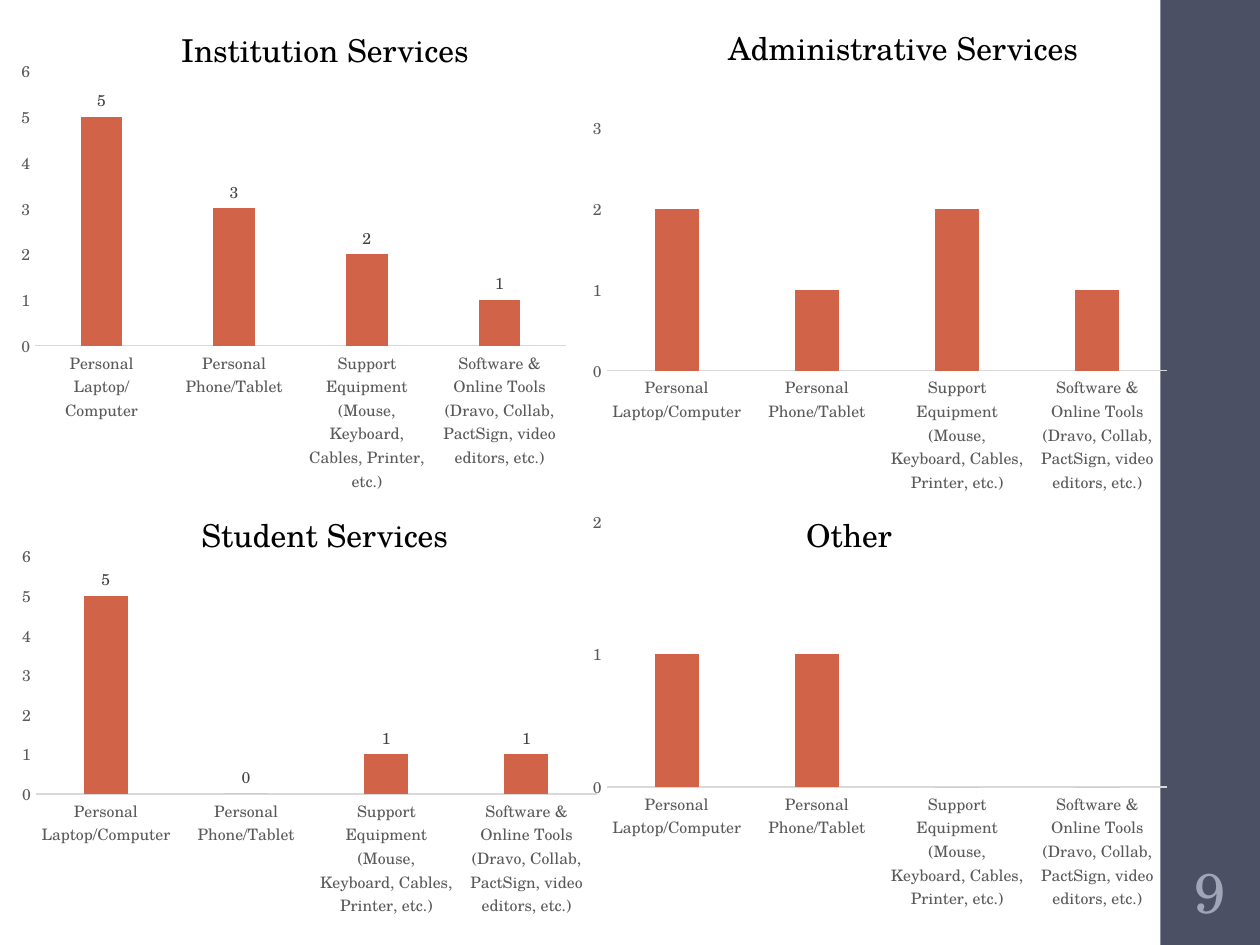
from pptx import Presentation
from pptx.chart import data
from pptx.dml.color import RGBColor
from pptx.enum import chart as ch, shapes, text
from pptx.util import Inches, Pt

FONT = "TeX Gyre Schola"
SLATE = RGBColor(0x4B, 0x50, 0x64)
PALE_SLATE = RGBColor(0xA0, 0xA5, 0xB8)
BRICK = RGBColor(0xD1, 0x63, 0x49)
BLACK = RGBColor(0, 0, 0)
DARK_GREY = RGBColor(0x40, 0x40, 0x40)
GREY = RGBColor(0x59, 0x59, 0x59)
LIGHT_GREY = RGBColor(0xD9, 0xD9, 0xD9)

EQUIPMENT = [
    "Personal Laptop/Computer",
    "Personal Phone/Tablet",
    "Support Equipment (Mouse, Keyboard, Cables, Printer, etc.)",
    "Software & Online Tools (Dravo, Collab, PactSign, video editors, etc.)",
]

# Title, title box, chart box, values, axis maximum, values shown on bars
SERVICES = [
    ("Student Services", (1.5, 4.05, 2.18, 0.4), (0.08, 4.26, 4.75, 3.08), (5, 0, 1, 1), 6, True),
    ("Institution Services", (1.34, 0.2, 2.5, 0.4), (0.08, 0.4, 4.5, 3.58), (5, 3, 2, 1), 6, True),
    ("Administrative Services", (5.68, 0.18, 3.01, 0.4), (4.61, 0.86, 4.75, 3.12), (2, 1, 2, 1), 3, False),
    ("Other", (6.3, 4.05, 0.89, 0.4), (4.61, 3.98, 4.75, 3.31), (1, 1, 0, 0), 2, False),
]


def set_font(font, size, color):
    font.name = FONT
    font.size = Pt(size)
    font.color.rgb = color


def add_text(box, words, size, color):
    label = slide.shapes.add_textbox(*map(Inches, box))
    run = label.text_frame.paragraphs[0].add_run()
    run.text = words
    set_font(run.font, size, color)
    return label.text_frame


prs = Presentation()
prs.slide_width, prs.slide_height = Inches(10), Inches(7.5)
slide = prs.slides.add_slide(prs.slide_layouts[6])

# Sidebar
sidebar = slide.shapes.add_shape(
    shapes.MSO_SHAPE.RECTANGLE, Inches(9.21), 0, Inches(0.8), Inches(7.5))
sidebar.shadow.inherit = False
sidebar.fill.solid()
sidebar.fill.fore_color.rgb = SLATE
sidebar.line.fill.background()

# Page number
page_number = add_text((9.23, 6.75, 0.75, 0.65), "9", 32, PALE_SLATE)
page_number.word_wrap = True
page_number.vertical_anchor = text.MSO_ANCHOR.MIDDLE
page_number.margin_left = page_number.margin_right = Inches(0.03)
page_number.paragraphs[0].alignment = text.PP_ALIGN.CENTER

# Charts
for title, title_box, chart_box, counts, top, show_counts in SERVICES:
    usage = data.CategoryChartData(number_format="General")
    usage.categories = EQUIPMENT
    usage.add_series("Series 1", counts)
    chart = slide.shapes.add_chart(
        ch.XL_CHART_TYPE.COLUMN_CLUSTERED, *map(Inches, chart_box), usage).chart
    chart.has_title = False
    chart.has_legend = False
    set_font(chart.font, 10, BLACK)

    for axis in (chart.category_axis, chart.value_axis):
        axis.major_tick_mark = axis.minor_tick_mark = ch.XL_TICK_MARK.NONE
        axis.has_major_gridlines = False
        set_font(axis.tick_labels.font, 9, GREY)
    chart.category_axis.format.line.color.rgb = LIGHT_GREY
    chart.category_axis.format.line.width = Pt(0.75)
    chart.value_axis.format.line.fill.background()
    chart.value_axis.minimum_scale = 0
    chart.value_axis.maximum_scale = top
    chart.value_axis.major_unit = 1

    plot = chart.plots[0]
    plot.gap_width = 219
    plot.overlap = -27
    plot.vary_by_categories = False
    bars = plot.series[0]
    bars.format.fill.solid()
    bars.format.fill.fore_color.rgb = BRICK
    if show_counts:
        labels = bars.data_labels
        labels.show_value = True
        labels.position = ch.XL_LABEL_POSITION.OUTSIDE_END
        set_font(labels.font, 9, DARK_GREY)

# Chart titles, in front of the charts
for title, title_box, *_ in SERVICES:
    heading = add_text(title_box, title, 18, BLACK)
    heading.word_wrap = False
    heading.auto_size = text.MSO_AUTO_SIZE.SHAPE_TO_FIT_TEXT

prs.save("out.pptx")
